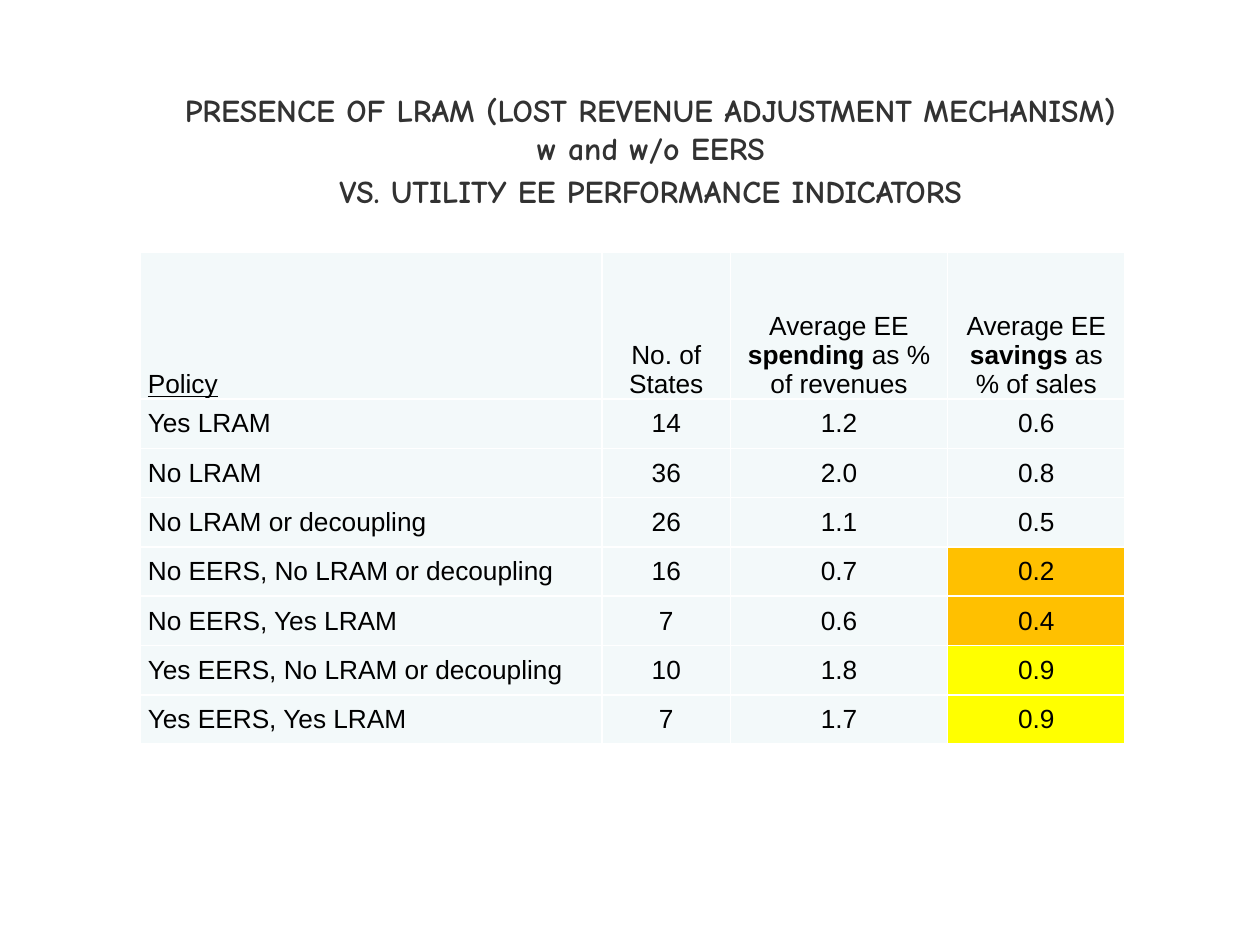
import pptx
import pptx.dml.color
import pptx.enum.text
import pptx.oxml
import pptx.oxml.ns
import pptx.util

Pt = pptx.util.Pt
ALIGN = pptx.enum.text.PP_ALIGN
ANCHOR = pptx.enum.text.MSO_ANCHOR

PALE, ORANGE, YELLOW, WHITE = "F3F9FA", "FFC000", "FFFF00", "FFFFFF"
BOLD, UNDERLINED = {"bold": True}, {"underline": True}

TITLE_LINES = [
    "PRESENCE OF LRAM (LOST REVENUE ADJUSTMENT MECHANISM)",
    "w and w/o EERS",
    "VS. UTILITY EE PERFORMANCE INDICATORS",
]
HEADINGS = [
    [("Policy", UNDERLINED)],
    [("No. of States", {})],
    [("Average EE ", {}), ("spending ", BOLD), ("as % of revenues", {})],
    [("Average EE ", {}), ("savings", BOLD), (" as % of sales", {})],
]
# policy, states, spending, savings, fill of the savings cell
POLICIES = [
    ("Yes LRAM", "14", "1.2", "0.6", PALE),
    ("No LRAM", "36", "2.0", "0.8", PALE),
    ("No LRAM or decoupling", "26", "1.1", "0.5", PALE),
    ("No EERS, No LRAM or decoupling", "16", "0.7", "0.2", ORANGE),
    ("No EERS, Yes LRAM", "7", "0.6", "0.4", ORANGE),
    ("Yes EERS, No LRAM or decoupling", "10", "1.8", "0.9", YELLOW),
    ("Yes EERS, Yes LRAM", "7", "1.7", "0.9", YELLOW),
]


def color(hex_code):
    return pptx.dml.color.RGBColor.from_string(hex_code)


def write(paragraph, runs, font="Arial", size=15, ink="000000",
          bold=False, align=ALIGN.LEFT, before=0, after=0):
    """Fill a paragraph with (text, extra format) runs."""
    paragraph.alignment = align
    paragraph.space_before, paragraph.space_after = Pt(before), Pt(after)
    for text, extra in runs:
        run = paragraph.add_run()
        run.text = text
        run.font.name, run.font.size = font, Pt(size)
        run.font.color.rgb = color(ink)
        run.font.bold = extra.get("bold", bold)
        run.font.underline = extra.get("underline", False)


def add_borders(cell, hex_code, width):
    properties = cell._tc.get_or_add_tcPr()
    for position, side in enumerate(("lnL", "lnR", "lnT", "lnB")):
        properties.insert(position, pptx.oxml.parse_xml(
            f'<a:{side} {pptx.oxml.ns.nsdecls("a")} w="{Pt(width)}">'
            f'<a:solidFill><a:srgbClr val="{hex_code}"/></a:solidFill></a:{side}>'))


class PolicySlide:
    def __init__(self, presentation):
        self.slide = presentation.slides.add_slide(presentation.slide_layouts[5])

    def title(self, lines, left, top, width, height):
        title = self.slide.shapes.title
        title.left, title.top = Pt(left), Pt(top)
        title.width, title.height = Pt(width), Pt(height)
        frame = title.text_frame
        frame.word_wrap = True
        frame.auto_size = pptx.enum.text.MSO_AUTO_SIZE.NONE
        frame.vertical_anchor = ANCHOR.TOP
        for number, line in enumerate(lines):
            paragraph = frame.add_paragraph() if number else frame.paragraphs[0]
            write(paragraph, [(line, {})], font="Comic Neue", size=18.2,
                  ink="323232", bold=True, align=ALIGN.CENTER,
                  before=3 if number == 2 else 0)

    def cell(self, cell, runs, fill, anchor, align):
        cell.margin_left = cell.margin_right = Pt(4.5)
        cell.margin_top = cell.margin_bottom = 0
        cell.vertical_anchor = anchor
        cell.fill.solid()
        cell.fill.fore_color.rgb = color(fill)
        add_borders(cell, WHITE, 1)
        write(cell.text_frame.paragraphs[0], runs, align=align, before=3, after=3)

    def table(self, headings, policies, left, top, widths, heading_height, row_height):
        heights = [heading_height] + [row_height] * len(policies)
        table = self.slide.shapes.add_table(
            len(heights), len(widths), Pt(left), Pt(top),
            Pt(sum(widths)), Pt(sum(heights))).table
        table.first_row = table.horz_banding = False
        for column, width in zip(table.columns, widths):
            column.width = Pt(width)
        for row, height in zip(table.rows, heights):
            row.height = Pt(height)

        aligns = [ALIGN.LEFT] + [ALIGN.CENTER] * (len(widths) - 1)
        for column, runs in enumerate(headings):
            self.cell(table.cell(0, column), runs, PALE, ANCHOR.BOTTOM, aligns[column])
        for row, (*values, savings_fill) in enumerate(policies, start=1):
            fills = [PALE] * (len(values) - 1) + [savings_fill]
            for column, value in enumerate(values):
                self.cell(table.cell(row, column), [(value, {})], fills[column],
                          ANCHOR.MIDDLE, aligns[column])


def main():
    presentation = pptx.Presentation()
    presentation.slide_width, presentation.slide_height = Pt(720), Pt(540)
    page = PolicySlide(presentation)
    page.title(TITLE_LINES, 60, 48, 624, 90)
    page.table(HEADINGS, POLICIES, 80, 144, [264, 73.5, 124, 101.5], 84, 28.2)
    presentation.save("out.pptx")


if __name__ == "__main__":
    main()
